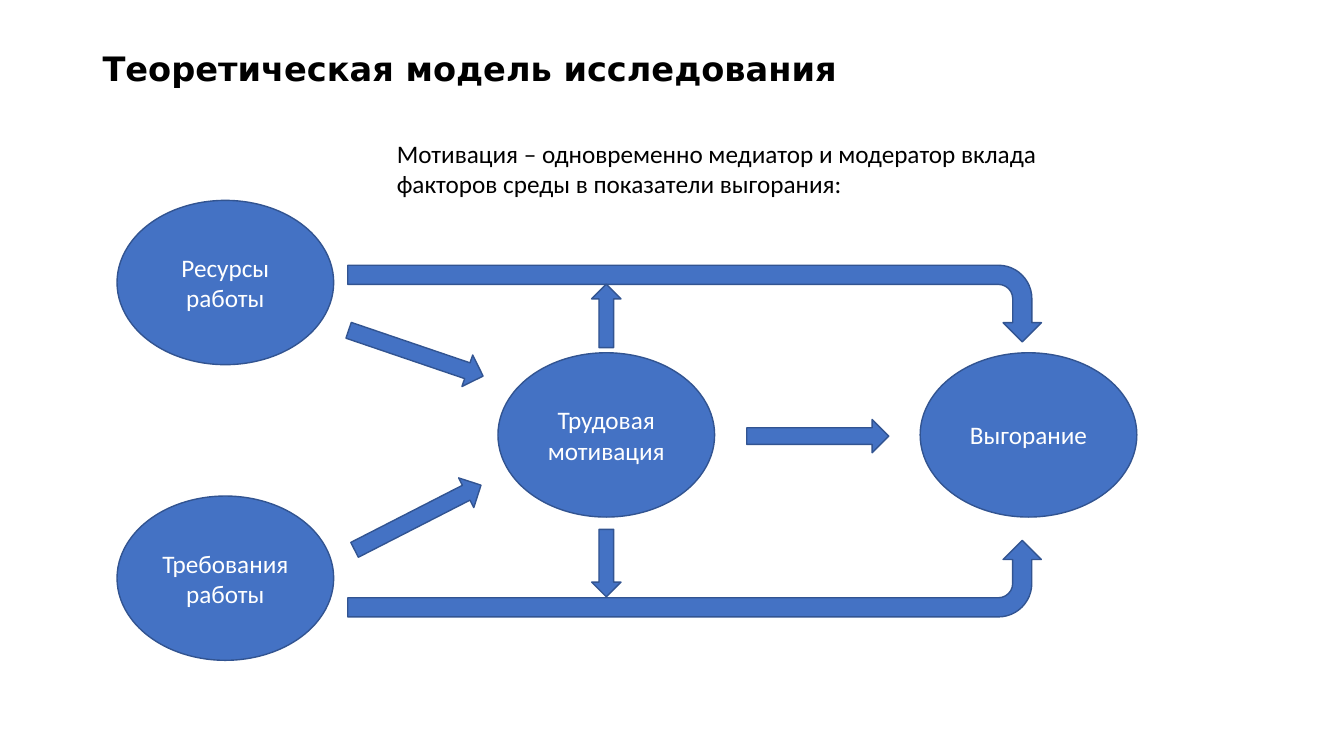
from pptx import Presentation
from pptx.dml.color import RGBColor
from pptx.enum.shapes import MSO_SHAPE
from pptx.enum.text import MSO_ANCHOR, PP_ALIGN
from pptx.util import Cm, Pt

OVAL = MSO_SHAPE.OVAL
RIGHT_ARROW = MSO_SHAPE.RIGHT_ARROW
BENT_ARROW = MSO_SHAPE.BENT_ARROW
MIDDLE = MSO_ANCHOR.MIDDLE
LEFT = PP_ALIGN.LEFT
CENTER = PP_ALIGN.CENTER

TITLE_BOX = (2.33, 0.76, 29.21, 2.03)
NOTE_BOX = (9.75, 3.35, 17.25, 1.8)
MODEL_BOX = (2.95, 5.05, 25.7, 11.59)
NODE_WIDTH, NODE_HEIGHT = 5.46, 4.14
MIDDLE_COLUMN = 9.6
FLOW_SIZE = (3.58, 0.84)
BYPASS_SIZE = (1.93, 17.48)


def color(hex_string):
    """Turn a hex string into a colour."""
    return RGBColor.from_string(hex_string)


def format_text(text_frame, size, hex_string, font_name="Calibri", bold=False, alignment=LEFT):
    """Format every run of a text frame alike."""
    for paragraph in text_frame.paragraphs:
        paragraph.alignment = alignment
        for run in paragraph.runs:
            run.font.size = Pt(size)
            run.font.name = font_name
            run.font.bold = bold
            run.font.color.rgb = color(hex_string)


def add_title(slide, box, text):
    """Place the slide title in the box."""
    title = slide.shapes.title
    title.left, title.top, title.width, title.height = map(Cm, box)
    text_frame = title.text_frame
    text_frame.text = text
    text_frame.vertical_anchor = MIDDLE
    text_frame.paragraphs[0].line_spacing = 0.9
    format_text(text_frame, 24, "000000", "DejaVu Sans", True)


def add_note(slide, box, text):
    """Place the explanatory text in the box."""
    text_frame = slide.shapes.add_textbox(*map(Cm, box)).text_frame
    text_frame.word_wrap = True
    text_frame.text = text
    format_text(text_frame, 18, "000000")


def add_blue_shape(slide, kind, box, rotation=0):
    """Add a blue outlined shape without shadow."""
    shape = slide.shapes.add_shape(kind, *map(Cm, box))
    shape.rotation = rotation
    shape.shadow.inherit = False
    shape.fill.solid()
    shape.fill.fore_color.rgb = color("4472C4")
    shape.line.color.rgb = color("325491")
    shape.line.width = Pt(1)
    return shape


def add_node(slide, box, text):
    """Add an ellipse with a centred label."""
    text_frame = add_blue_shape(slide, OVAL, box).text_frame
    text_frame.word_wrap = True
    text_frame.vertical_anchor = MIDDLE
    text_frame.text = text
    format_text(text_frame, 18, "FFFFFF", alignment=CENTER)


def add_model(slide, box):
    """Place the nodes and arrows of the model in the box."""
    left, top, width, height = box
    middle_row = top + 3.84
    nodes = [
        ("Требования работы", left, top + height - NODE_HEIGHT),
        ("Ресурсы работы", left, top),
        ("Трудовая мотивация", left + MIDDLE_COLUMN, middle_row),
        ("Выгорание", left + width - NODE_WIDTH, middle_row),
    ]
    for text, node_left, node_top in nodes:
        add_node(slide, (node_left, node_top, NODE_WIDTH, NODE_HEIGHT), text)

    arrows = [
        (RIGHT_ARROW, 15.87, 5.52, FLOW_SIZE, 0),
        (RIGHT_ARROW, 5.74, 3.43, FLOW_SIZE, 18.8),
        (RIGHT_ARROW, 5.79, 7.57, FLOW_SIZE, 332.9),
        (BENT_ARROW, 13.59, -6.14, BYPASS_SIZE, 90),
        (BENT_ARROW, 13.59, 0.79, BYPASS_SIZE, 90),
        (RIGHT_ARROW, 11.53, 2.54, (1.6, 0.74), 270),
        (RIGHT_ARROW, 11.48, 8.77, (1.7, 0.74), 90),
    ]
    shapes = [
        add_blue_shape(slide, kind, (left + across, top + down, *size), rotation)
        for kind, across, down, size, rotation in arrows
    ]
    lower_bypass = shapes[4]
    lower_bypass.element.spPr.xfrm.set("flipH", "1")


def main():
    """Build and save the presentation."""
    presentation = Presentation()
    presentation.slide_width = Cm(33.87)
    presentation.slide_height = Cm(19.05)
    slide = presentation.slides.add_slide(presentation.slide_layouts[5])
    add_title(slide, TITLE_BOX, "Теоретическая модель исследования")
    add_model(slide, MODEL_BOX)
    add_note(
        slide,
        NOTE_BOX,
        "Мотивация – одновременно медиатор и модератор вклада "
        "факторов среды в показатели выгорания:",
    )
    presentation.save("out.pptx")


if __name__ == "__main__":
    main()
